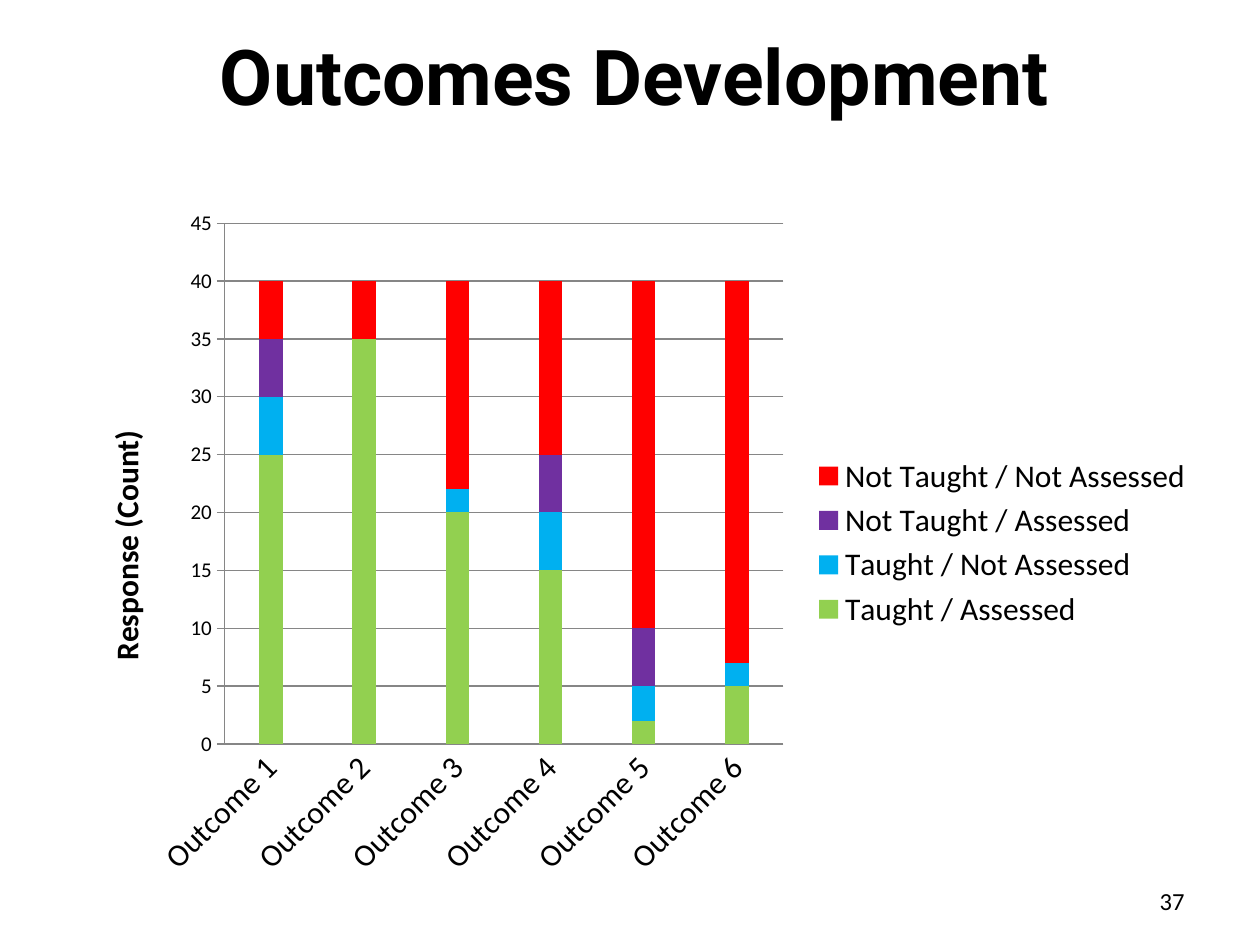
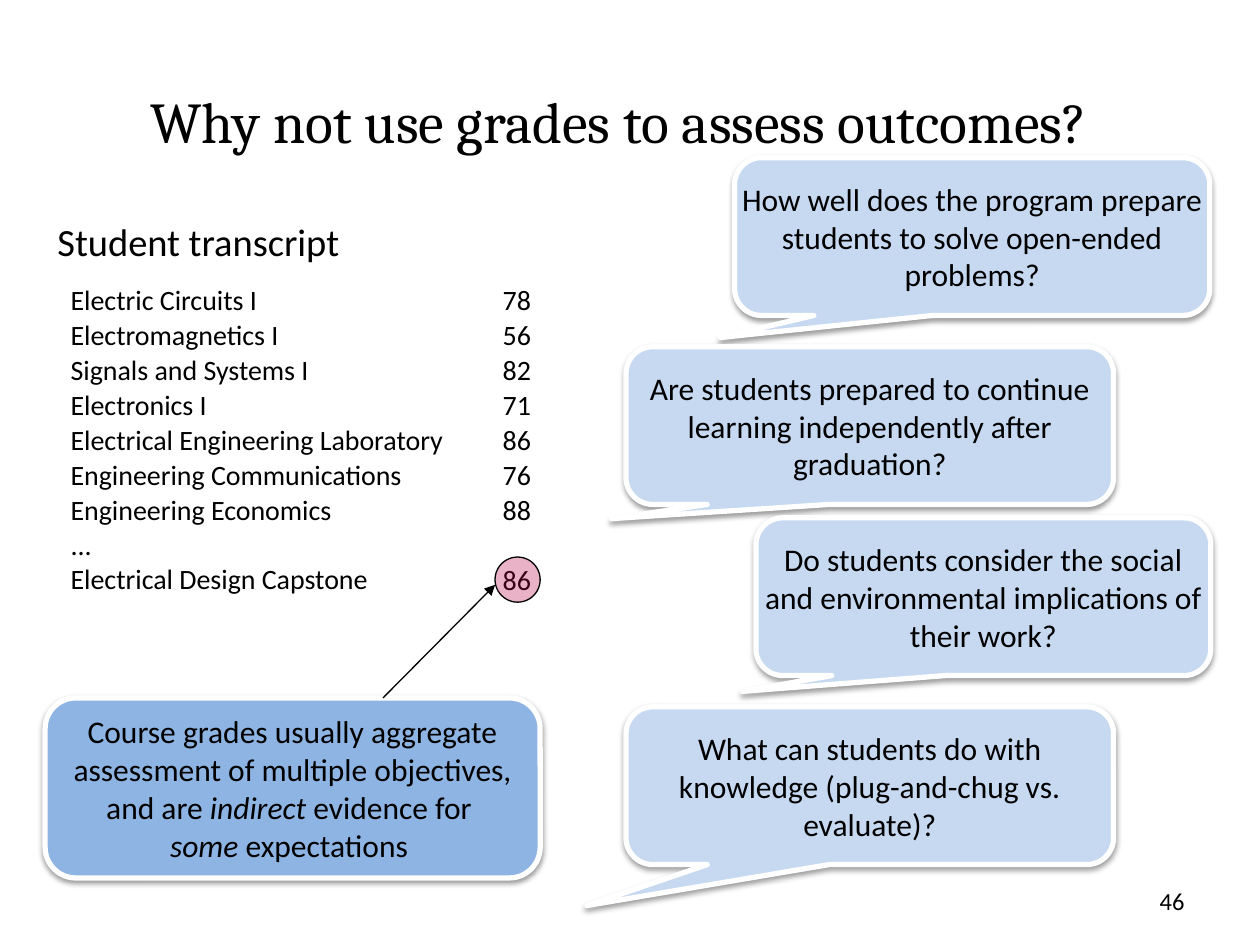
from lxml.etree import SubElement
from pptx import Presentation
from pptx.chart.data import CategoryChartData
from pptx.dml.color import RGBColor
from pptx.enum.chart import XL_CHART_TYPE as ChartType, XL_LEGEND_POSITION as LegendPosition
from pptx.enum.chart import XL_TICK_MARK as TickMark
from pptx.enum.shapes import MSO_CONNECTOR as Connector, MSO_SHAPE as Shape
from pptx.enum.text import MSO_ANCHOR as Anchor, PP_ALIGN as Align
from pptx.oxml.ns import qn
from pptx.util import Cm, Pt

BLACK = RGBColor(0x00, 0x00, 0x00)
WHITE = RGBColor(0xFF, 0xFF, 0xFF)
AXIS_GREY = RGBColor(0x86, 0x86, 0x86)
GREEN = RGBColor(0x92, 0xD0, 0x50)
CYAN = RGBColor(0x00, 0xB0, 0xF0)
PURPLE = RGBColor(0x70, 0x30, 0xA0)
RED = RGBColor(0xFF, 0x00, 0x00)
PALE_BLUE = RGBColor(0xC6, 0xD9, 0xF1)
MID_BLUE = RGBColor(0x8E, 0xB4, 0xE3)
CRIMSON = RGBColor(0xB8, 0x00, 0x47)
BODY_FONT = "Calibri"


def write(frame, text, size, font=BODY_FONT, align=Align.LEFT, bold=False):
    """Fill a text frame; words between asterisks become italic."""
    frame.text = text
    for paragraph in frame.paragraphs:
        pieces = paragraph.text.split("*")
        paragraph.clear()
        paragraph.alignment = align
        for index, piece in enumerate(pieces):
            if not piece:
                continue
            run = paragraph.add_run()
            run.text = piece
            run.font.size, run.font.name = Pt(size), font
            run.font.bold, run.font.italic = bold, index % 2 == 1
            run.font.color.rgb = BLACK


def place(part, **fractions):
    """Give a chart part a fixed place, in fractions of the chart."""
    layout = part.find(qn("c:layout"))
    if layout is None:
        layout = part.makeelement(qn("c:layout"), {})
        part.insert(0 if part.find(qn("c:tx")) is None else 1, layout)
    manual = SubElement(layout, qn("c:manualLayout"))
    if "w" in fractions:
        SubElement(manual, qn("c:layoutTarget"), val="inner")
    for side in "xy":
        SubElement(manual, qn(f"c:{side}Mode"), val="edge")
    for side, value in fractions.items():
        SubElement(manual, qn(f"c:{side}"), val=str(value))


deck = Presentation()
deck.slide_width, deck.slide_height = Cm(25.4), Cm(19.05)

# Titles and page numbers of both slides
headings = [
    ("Outcomes Development", 44, "Roboto", True, (0.1, -0.08, 25.4, 3.18), "37"),
    ("Why not use grades to assess outcomes?", 33, "Cambria", False, (0.46, 1.68, 24.03, 1.5), "46"),
]
slides = []
for heading, size, font, bold, area, number in headings:
    slide = deck.slides.add_slide(deck.slide_layouts[6])
    slides.append(slide)
    title = slide.shapes.add_textbox(*map(Cm, area)).text_frame
    page_number = slide.shapes.add_textbox(Cm(18.21), Cm(17.65), Cm(5.92), Cm(1.02)).text_frame
    for frame in (title, page_number):
        frame.word_wrap = True
        frame.vertical_anchor = Anchor.MIDDLE
    write(title, heading, size, font, Align.CENTER, bold)
    write(page_number, number, 14, align=Align.RIGHT)
outcomes, grades = slides

# Stacked chart of responses per outcome
responses = [
    ("Taught / Assessed", (25, 35, 20, 15, 2, 5), GREEN),
    ("Taught / Not Assessed", (5, 0, 2, 5, 3, 2), CYAN),
    ("Not Taught / Assessed", (5, 0, 0, 5, 5, 0), PURPLE),
    ("Not Taught / Not Assessed", (5, 5, 18, 15, 30, 33), RED),
]
response_data = CategoryChartData()
response_data.categories = [f"Outcome {n}" for n in range(1, 7)]
for name, counts, _ in responses:
    response_data.add_series(name, counts)
chart = outcomes.shapes.add_chart(
    ChartType.COLUMN_STACKED, Cm(1.3), Cm(3.94), Cm(23.01), Cm(14), response_data).chart
chart.has_title = False
chart.font.name, chart.font.size = BODY_FONT, Pt(10)
chart.font.color.rgb = BLACK
plot = chart.plots[0]
plot.gap_width, plot.overlap, plot.vary_by_categories = 300, 100, False
for series, (_, _, color) in zip(plot.series, responses):
    series.format.fill.solid()
    series.format.fill.fore_color.rgb = color
chart.has_legend = True
chart.legend.position = LegendPosition.RIGHT
chart.legend.include_in_layout = False
chart.legend.font.size = Pt(18)
place(chart._chartSpace.chart.plotArea, x=0.14, y=0.04, w=0.49, h=0.75)

# Axes
outcome_axis, count_axis = chart.category_axis, chart.value_axis
count_axis.minimum_scale, count_axis.maximum_scale, count_axis.major_unit = 0, 45, 5
count_axis.has_major_gridlines = True
for line in (outcome_axis.format.line, count_axis.format.line, count_axis.major_gridlines.format.line):
    line.color.rgb = AXIS_GREY
    line.width = Pt(0.75)
for axis, size, tick in ((outcome_axis, 18, TickMark.NONE), (count_axis, 12, TickMark.OUTSIDE)):
    axis.tick_labels.font.size = Pt(size)
    axis.major_tick_mark, axis.minor_tick_mark = tick, TickMark.NONE
outcome_axis._element.find(qn("c:txPr")).find(qn("a:bodyPr")).set("rot", "-2700000")
count_title = count_axis.axis_title
write(count_title.text_frame, "Response (Count)", 18, align=Align.CENTER, bold=True)
count_title.text_frame._txBody.find(qn("a:bodyPr")).set("rot", "-5400000")
place(count_title._element, x=0.03, y=0.33)

# Student transcript
transcript = [
    ("Electric Circuits I", "78"),
    ("Electromagnetics I", "56"),
    ("Signals and Systems I", "82"),
    ("Electronics I", "71"),
    ("Electrical Engineering Laboratory", "86"),
    ("Engineering Communications", "76"),
    ("Engineering Economics", "88"),
    ("...", ""),
    ("Electrical Design Capstone", "86"),
]
transcript_table = grades.shapes.add_table(1, 2, Cm(1.17), Cm(5.59), Cm(10.01), Cm(6.58)).table
transcript_table.first_row = transcript_table.horz_banding = False
courses, marks = zip(*transcript)
for column, (entries, width) in enumerate(((courses, 8.71), (marks, 1.3))):
    transcript_table.columns[column].width = Cm(width)
    cell = transcript_table.cell(0, column)
    cell.fill.background()
    cell.vertical_anchor = Anchor.MIDDLE
    write(cell.text_frame, "\n".join(filter(None, entries)), 16)
    for paragraph in cell.text_frame.paragraphs:
        paragraph.line_spacing = 1.02
# The capstone mark skips the line of the dots
marks_frame = transcript_table.cell(0, 1).text_frame
marks_frame.paragraphs[-1].space_before = Pt(20)

transcript_heading = grades.shapes.add_textbox(Cm(0.91), Cm(4.27), Cm(7.72), Cm(1.17)).text_frame
transcript_heading.word_wrap = True
write(transcript_heading, "Student transcript", 22)

# Question callouts and the card on course grades
CALLOUT, CARD = Shape.ROUNDED_RECTANGULAR_CALLOUT, Shape.ROUNDED_RECTANGLE
bubbles = [
    (CALLOUT, (14.81, 3.18, 9.58, 3.18), (-0.53, 0.64, 0.17), PALE_BLUE,
     "How well does the program prepare\nstudents to solve open-ended\nproblems?"),
    (CALLOUT, (12.62, 6.99, 9.83, 3.18), (-0.53, 0.59, 0.17), PALE_BLUE,
     "Are students prepared to continue\nlearning independently after\ngraduation?"),
    (CALLOUT, (15.24, 10.44, 9.17, 3.18), (-0.53, 0.6, 0.17), PALE_BLUE,
     "Do students consider the social\nand environmental implications of\ntheir work?"),
    (CALLOUT, (12.62, 14.25, 9.83, 3.18), (-0.58, 0.76, 0.17), PALE_BLUE,
     "What can students do with\nknowledge (plug-and-chug vs.\nevaluate)?"),
    (CARD, (0.91, 14.07, 9.98, 3.63), (0.17,), MID_BLUE,
     "Course grades usually aggregate\nassessment of multiple objectives,\n"
     "and are *indirect *evidence for \n*some *expectations "),
]
for kind, area, adjustments, color, text in bubbles:
    bubble = grades.shapes.add_shape(kind, *map(Cm, area))
    for index, value in enumerate(adjustments):
        bubble.adjustments[index] = value
    bubble.fill.solid()
    bubble.fill.fore_color.rgb = color
    bubble.line.color.rgb = WHITE
    bubble.line.width = Pt(3)
    bubble.shadow.inherit = False
    effects = bubble._element.spPr.find(qn("a:effectLst"))
    shadow = SubElement(effects, qn("a:outerShdw"), blurRad="40000", dist="20000",
                        dir="5400000", rotWithShape="0")
    shadow_color = SubElement(shadow, qn("a:srgbClr"), val=str(BLACK))
    SubElement(shadow_color, qn("a:alpha"), val="38000")
    bubble.text_frame.word_wrap = False
    bubble.text_frame.vertical_anchor = Anchor.MIDDLE
    write(bubble.text_frame, text, 18, align=Align.CENTER)

# Arrow from the card to the circled capstone mark
arrow = grades.shapes.add_connector(Connector.STRAIGHT, Cm(7.72), Cm(14.07), Cm(9.98), Cm(11.79))
arrow.line.color.rgb = BLACK
arrow.line.width = Pt(0.75)
SubElement(arrow.line._get_or_add_ln(), qn("a:tailEnd"), type="triangle")
SubElement(arrow._element.spPr, qn("a:effectLst"))

mark_circle = grades.shapes.add_shape(Shape.OVAL, Cm(9.98), Cm(11.23), Cm(0.91), Cm(0.91))
mark_circle.shadow.inherit = False
mark_circle.fill.solid()
mark_circle.fill.fore_color.rgb = CRIMSON
circle_color = mark_circle._element.spPr.find(qn("a:solidFill")).find(qn("a:srgbClr"))
SubElement(circle_color, qn("a:alpha"), val="30000")
mark_circle.line.color.rgb = BLACK
mark_circle.line.width = Pt(0.75)

deck.save("out.pptx")
